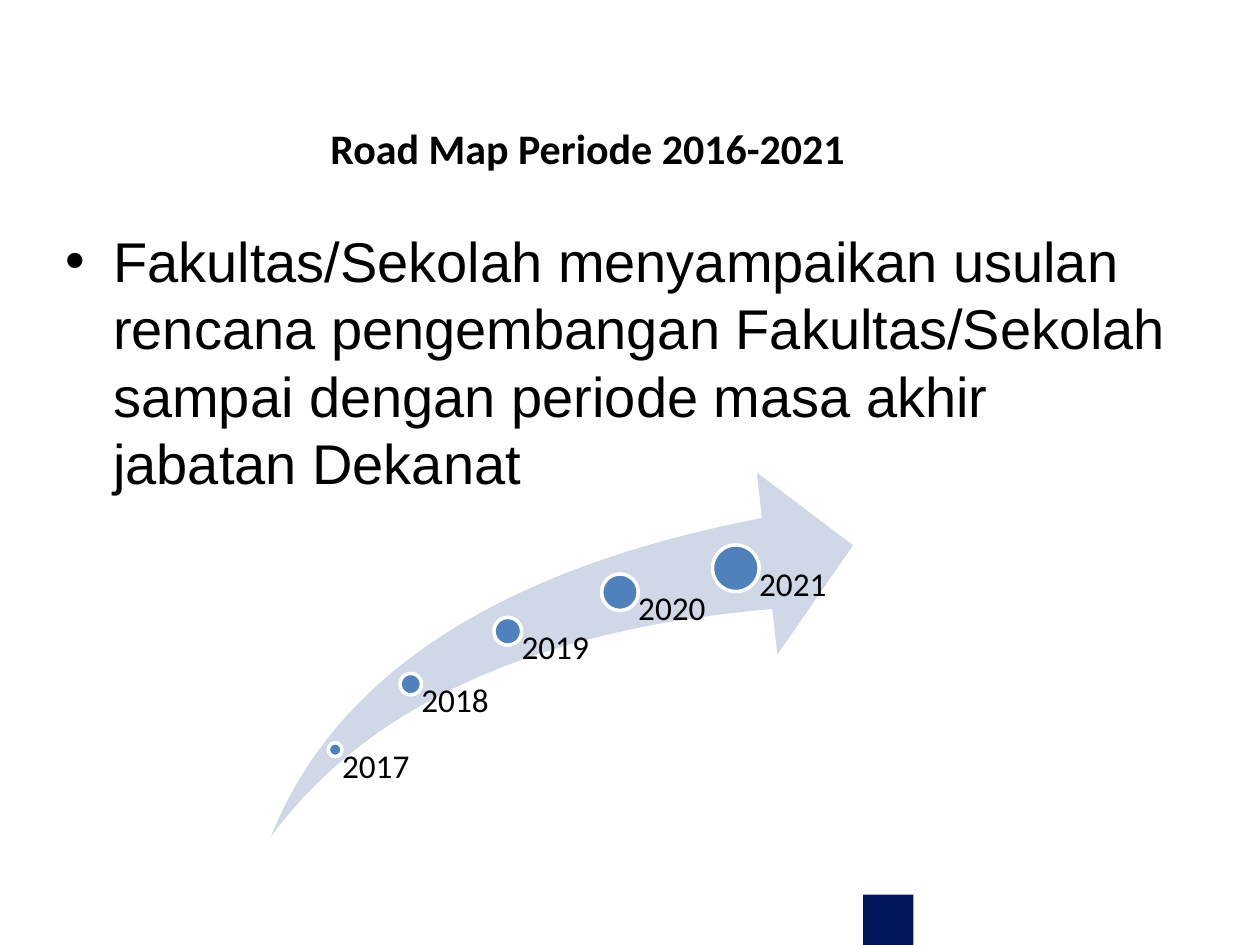
from lxml import etree
from pptx import Presentation
from pptx.dml.color import RGBColor
from pptx.enum.shapes import MSO_SHAPE
from pptx.enum.text import MSO_ANCHOR, PP_ALIGN
from pptx.oxml.ns import qn
from pptx.util import Inches, Pt

RECTANGLE, OVAL, SWOOSH = MSO_SHAPE.RECTANGLE, MSO_SHAPE.OVAL, MSO_SHAPE.SWOOSH_ARROW
TOP, MIDDLE = MSO_ANCHOR.TOP, MSO_ANCHOR.MIDDLE
LEFT, CENTER = PP_ALIGN.LEFT, PP_ALIGN.CENTER

NAVY, BLUE, PALE, WHITE, BLACK = "02165B", "4F81BD", "D0D8E8", "FFFFFF", "000000"
TITLE = "Road Map Periode 2016-2021"
PROPOSAL = ("Fakultas/Sekolah menyampaikan usulan rencana pengembangan "
            "Fakultas/Sekolah sampai dengan periode masa akhir jabatan Dekanat")
MILESTONES = [
    ("2017", 2.66, 5.95, 0.11, 0.61),
    ("2018", 3.26, 5.43, 0.17, 0.77),
    ("2019", 4.03, 5.01, 0.22, 0.89),
    ("2020", 4.92, 4.7, 0.29, 0.92),
    ("2021", 5.84, 4.51, 0.37, 0.92),
]


def color(value):
    """Return the colour for a hex string."""
    return RGBColor.from_string(value)


def add_figure(shapes, kind, box, fill, line=None):
    """Add a filled preset shape, outlined only when a line colour is given."""
    figure = shapes.add_shape(kind, *map(Inches, box))
    figure.shadow.inherit = False
    figure.fill.solid()
    figure.fill.fore_color.rgb = color(fill)
    if line:
        figure.line.color.rgb = color(line)
        figure.line.width = Pt(2)
    else:
        figure.line.fill.background()
    return figure


def write(shape, text, font, size, bold=False, align=LEFT, anchor=TOP):
    """Write one styled paragraph into a shape and return the paragraph."""
    frame = shape.text_frame
    frame.word_wrap = True
    frame.vertical_anchor = anchor
    frame.text = text
    para = frame.paragraphs[0]
    para.alignment = align
    span = para.runs[0]
    span.font.name, span.font.size, span.font.bold = font, Pt(size), bold
    span.font.color.rgb = color(BLACK)
    return para


def place_title(page, box):
    """Move the title placeholder into its box and format it."""
    title = page.shapes.title
    title.left, title.top, title.width, title.height = map(Inches, box)
    write(title, TITLE, "Calibri", 24, True, CENTER, MIDDLE)


def add_proposal(page, box):
    """Add the bulleted proposal text."""
    body = page.shapes.add_textbox(*map(Inches, box))
    para = write(body, PROPOSAL, "Arial", 32)
    properties = para._p.get_or_add_pPr()
    properties.set("marL", str(Inches(0.38)))
    properties.set("indent", str(-Inches(0.38)))
    etree.SubElement(properties, qn("a:buFont")).set("typeface", "Arial")
    etree.SubElement(properties, qn("a:buChar")).set("char", "•")


def add_milestone(shapes, year, x, y, diameter, width, bottom):
    """Add a dot centred at x, y with its year label to the lower right."""
    radius = diameter / 2
    add_figure(shapes, OVAL, (x - radius, y - radius, diameter, diameter), BLUE, WHITE)
    label = shapes.add_textbox(*map(Inches, (x, y, width, bottom - y)))
    frame = label.text_frame
    frame.margin_left = Inches(radius)
    frame.margin_top = frame.margin_right = frame.margin_bottom = 0
    write(label, year, "Calibri", 19).line_spacing = 0.9


def add_road_map(page, box):
    """Add the swoosh arrow and its yearly milestones as one group."""
    shapes = page.shapes.add_group_shape().shapes
    arrow = add_figure(shapes, SWOOSH, box, PALE)
    arrow.adjustments[0] = arrow.adjustments[1] = 0.25
    for milestone in MILESTONES:
        add_milestone(shapes, *milestone, bottom=box[1] + box[3])


def main():
    """Build the slide and save it."""
    deck = Presentation()
    deck.slide_width, deck.slide_height = Inches(10), Inches(7.5)
    page = deck.slides.add_slide(deck.slide_layouts[5])
    add_figure(page.shapes, RECTANGLE, (6.85, 7.1, 0.4, 0.4), NAVY)
    place_title(page, (0.58, 0.92, 8.17, 0.5))
    add_proposal(page, (0.42, 1.75, 9, 4.53))
    add_road_map(page, (2.15, 3.75, 4.62, 2.89))
    deck.save("out.pptx")


if __name__ == "__main__":
    main()
